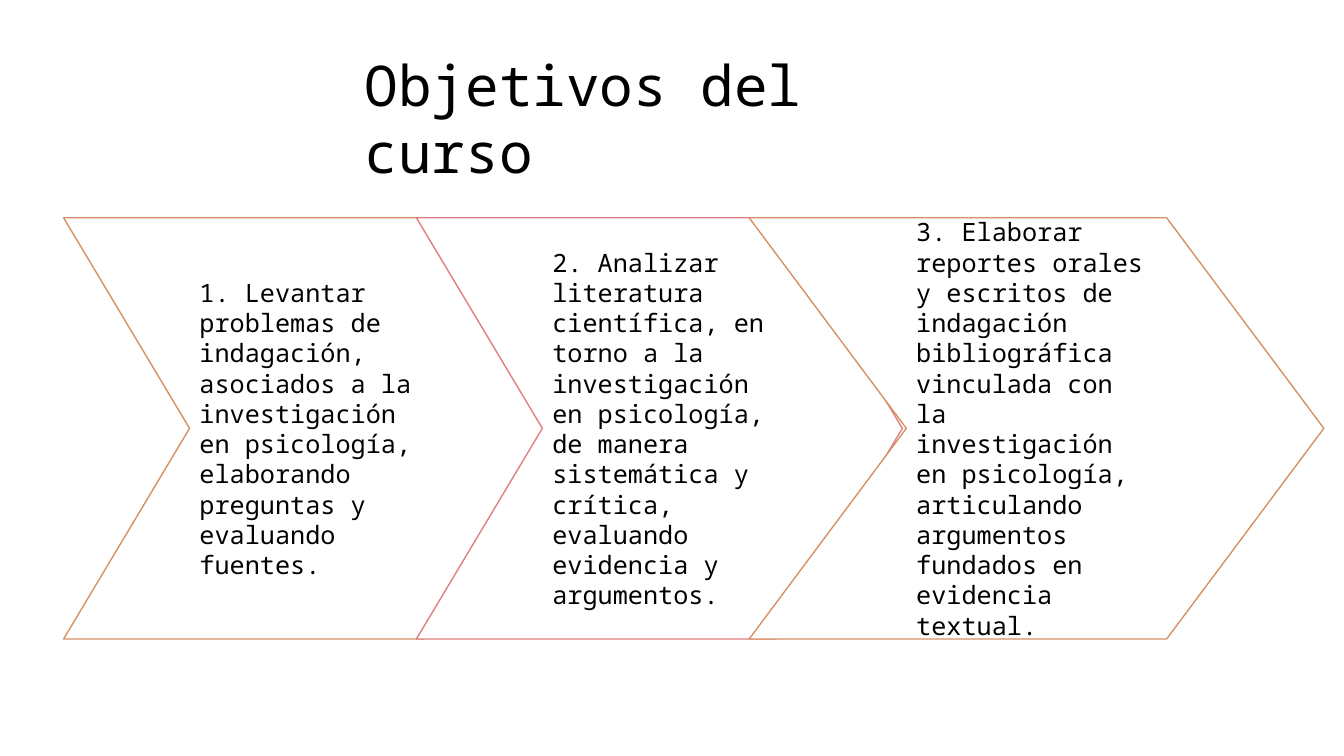
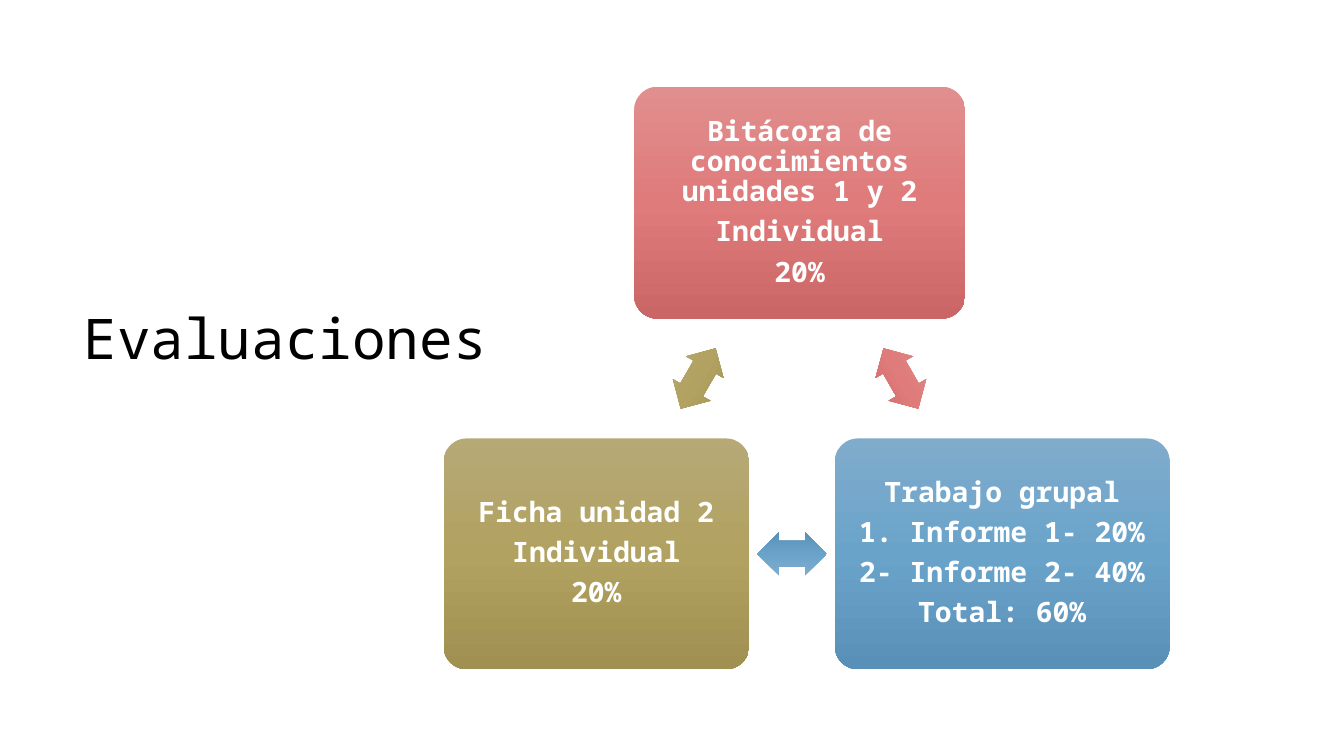
import copy

import pptx
import pptx.util
import pptx.dml.color
import pptx.enum.shapes
import pptx.enum.text
import pptx.oxml.ns

RGBColor = pptx.dml.color.RGBColor
Shape = pptx.enum.shapes.MSO_SHAPE
Align = pptx.enum.text.PP_ALIGN
Pt = pptx.util.Pt
Inches = pptx.util.Inches

FONT = "Noto Sans Mono"
BLACK = RGBColor(0x00, 0x00, 0x00)
WHITE = RGBColor(0xFF, 0xFF, 0xFF)
ORANGE = RGBColor(0xD5, 0x91, 0x64)
PINK = RGBColor(0xDC, 0x80, 0x81)
# Gradients run from top to bottom: light, middle, dark
RED_SHADES = (RGBColor(0xE0, 0x8E, 0x8E), RGBColor(0xDF, 0x7B, 0x7B), RGBColor(0xCB, 0x66, 0x66))
BLUE_SHADES = (RGBColor(0x80, 0xAC, 0xCC), RGBColor(0x6A, 0xA3, 0xCA), RGBColor(0x59, 0x90, 0xB7))
OLIVE_SHADES = (RGBColor(0xB6, 0xA9, 0x76), RGBColor(0xB1, 0xA2, 0x61), RGBColor(0xA0, 0x90, 0x51))

deck = pptx.Presentation()
deck.slide_width = Inches(13.33)
deck.slide_height = Inches(7.5)
blank = deck.slide_layouts[6]


def add_box(slide, kind, left, top, width, height, shades=None):
    """Add a shape, or a text box if kind is None, placed in percent of the slide."""
    across, down = deck.slide_width / 100, deck.slide_height / 100
    place = [round(n) for n in (left * across, top * down, width * across, height * down)]
    if kind is None:
        return slide.shapes.add_textbox(*place)
    shape = slide.shapes.add_shape(kind, *place)
    shape.shadow.inherit = False
    if shades:
        shape.line.fill.background()
        shape.fill.gradient()
        shape.fill.gradient_angle = 270
        stop_list = shape.element.spPr.find(".//" + pptx.oxml.ns.qn("a:gsLst"))
        stop_list.append(copy.deepcopy(stop_list[-1]))
        for stop, color, position in zip(shape.fill.gradient_stops, shades, (0, 0.5, 1)):
            stop.color.rgb = color
            stop.position = position
    return shape


def write(box, lines, size, color, bold=False, align=Align.LEFT, spacing=None, gap=0):
    """Fill a box with one paragraph per line, centred vertically."""
    frame = box.text_frame
    frame.word_wrap = True
    frame.vertical_anchor = pptx.enum.text.MSO_ANCHOR.MIDDLE
    frame.text = "\n".join(lines)
    for index, para in enumerate(frame.paragraphs):
        para.alignment = align
        para.line_spacing = spacing
        para.space_before = Pt(gap if index else 0)
        para.font.name = FONT
        para.font.size = Pt(size)
        para.font.bold = bold
        para.font.color.rgb = color


# Titles: text, then left, top, width and height
TITLES = (
    ("Objetivos del curso", (26.41, 5.87, 40.74, 19.33)),
    ("Evaluaciones", (5.48, 34.53, 73.14, 20)),
)
slides = []
for title, place in TITLES:
    page = deck.slides.add_slide(blank)
    write(add_box(page, None, *place), [title], 40, BLACK)
    slides.append(page)
goals_page, grading_page = slides

# Course goals: left, width, point depth, outline, text
GOALS = (
    (4.73, 36.16, 0.299, ORANGE,
     "1. Levantar problemas de indagación, asociados a la investigación en psicología, "
     "elaborando preguntas y evaluando fuentes."),
    (30.98, 36.16, 0.299, PINK,
     "2. Analizar literatura científica, en torno a la investigación en psicología, "
     "de manera sistemática y crítica, evaluando evidencia y argumentos."),
    (55.74, 42.76, 0.373, ORANGE,
     "3. Elaborar reportes orales y escritos de indagación bibliográfica vinculada con la "
     "investigación en psicología, articulando argumentos fundados en evidencia textual."),
)
for left, width, depth, outline, goal in GOALS:
    chevron = add_box(goals_page, Shape.CHEVRON, left, 28.8, width, 55.73)
    chevron.adjustments[0] = depth
    chevron.fill.solid()
    chevron.fill.fore_color.rgb = WHITE
    chevron.line.color.rgb = outline
    chevron.line.width = Pt(1)
    write(chevron, [goal], 18, BLACK)

# Assessments: card place, arrow left and top, arrow rotation, shades, lines
ASSESSMENTS = (
    ((47.19, 11.47, 24.61, 30.67), (64.44, 47.2), 60, RED_SHADES,
     ("Bitácora de conocimientos unidades 1 y 2", "Individual", "20%")),
    ((62.12, 58, 24.91, 30.53), (56.34, 70.4), 180, BLUE_SHADES,
     ("Trabajo grupal", "1. Informe 1- 20%", "2- Informe 2- 40%", "Total: 60%")),
    ((33.01, 58, 22.73, 30.53), (49.36, 47.2), 300, OLIVE_SHADES,
     ("Ficha unidad 2", "Individual", "20%")),
)
for place, arrow_corner, rotation, shades, lines in ASSESSMENTS:
    card = add_box(grading_page, Shape.ROUNDED_RECTANGLE, *place, shades)
    card.adjustments[0] = 0.1
    write(card, lines, 20, WHITE, bold=True, align=Align.CENTER, spacing=0.9, gap=7)
    arrow = add_box(grading_page, Shape.LEFT_RIGHT_ARROW, *arrow_corner, 5.18, 5.73, shades)
    arrow.adjustments[0] = 0.6
    arrow.adjustments[1] = 0.5
    arrow.rotation = rotation

deck.save("out.pptx")
